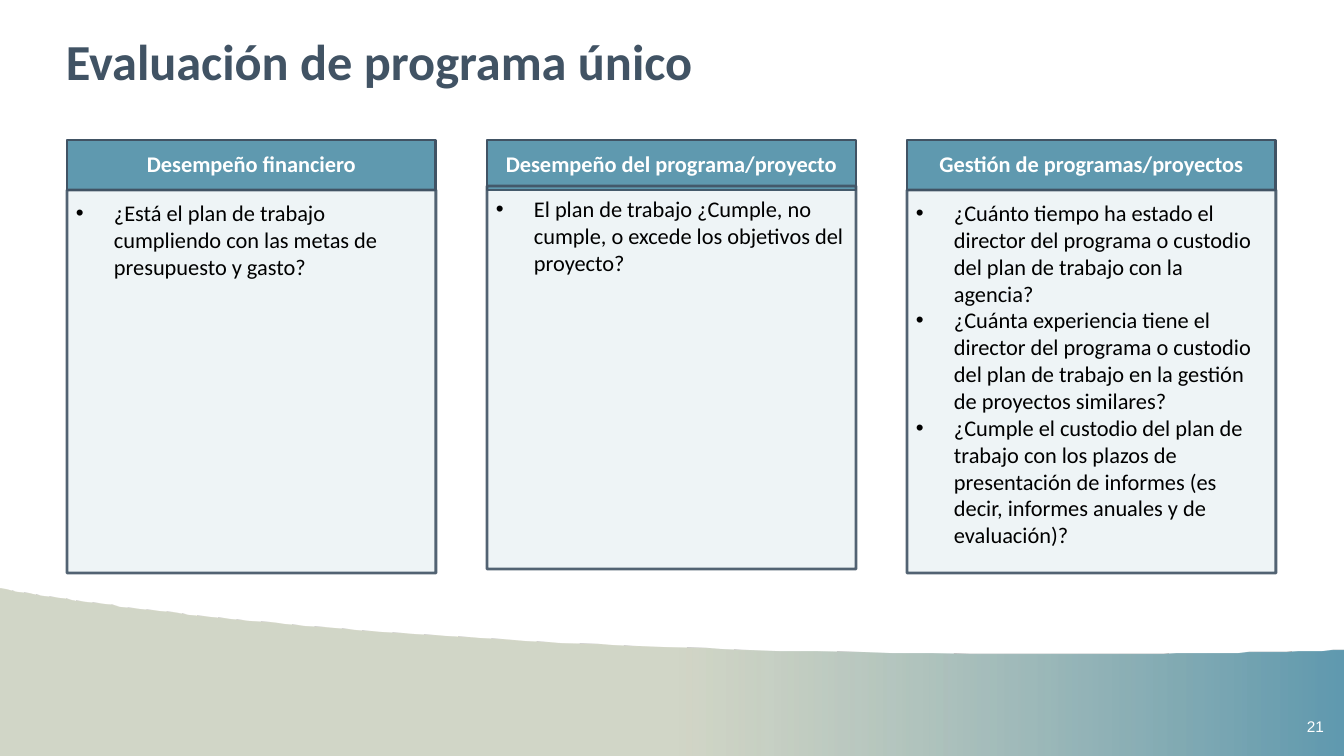
import pptx
import pptx.dml.color
import pptx.enum.shapes
import pptx.enum.text
import pptx.oxml
import pptx.oxml.ns
import pptx.util

EMU_PER_PX = 914400 / 100.8
ANCHOR = pptx.enum.text.MSO_ANCHOR
ALIGN = pptx.enum.text.PP_ALIGN

TEAL, SLATE, SAGE = "5F99AF", "415364", "B7BDA4"
WHITE, BLACK = "FFFFFF", "000000"

COLUMN_LEFT, COLUMN_STEP, COLUMN_WIDTH = 67, 420, 369
HEADER_TOP, HEADER_HEIGHT, BODY_HEIGHT = 140, 50, 383

# heading, top of the body, questions
COLUMNS = [
    ("Desempeño financiero", 190, [
        "¿Está el plan de trabajo cumpliendo con las metas de presupuesto y gasto?",
    ]),
    ("Desempeño del programa/proyecto", 186, [
        "El plan de trabajo ¿Cumple, no cumple, o excede los objetivos del proyecto?",
    ]),
    ("Gestión de programas/proyectos", 190, [
        "¿Cuánto tiempo ha estado el director del programa o custodio del plan de "
        "trabajo con la agencia?",
        "¿Cuánta experiencia tiene el director del programa o custodio del plan de "
        "trabajo en la gestión de proyectos similares?",
        "¿Cumple el custodio del plan de trabajo con los plazos de presentación de "
        "informes (es decir, informes anuales y de evaluación)?",
    ]),
]


def px(length):
    return pptx.util.Emu(round(length * EMU_PER_PX))


def rgb(hex_color):
    return pptx.dml.color.RGBColor.from_string(hex_color)


def set_opacity(color_parent, percent):
    """Make the first colour found below an XML element translucent."""
    color = next(color_parent.iter(pptx.oxml.ns.qn("a:srgbClr")))
    color.append(pptx.oxml.parse_xml(
        f'<a:alpha {pptx.oxml.ns.nsdecls("a")} val="{percent * 1000}"/>'))


def set_font(paragraph, size, color, name="Calibri", bold=False):
    paragraph.font.name = name
    paragraph.font.size = pptx.util.Pt(size)
    paragraph.font.bold = bold
    paragraph.font.color.rgb = rgb(color)


def set_margins(frame, left, top, right, bottom):
    frame.margin_left, frame.margin_top = px(left), px(top)
    frame.margin_right, frame.margin_bottom = px(right), px(bottom)


def bezier(start, control1, control2, end, steps=24):
    """Points along a cubic curve, without its start."""
    points = []
    for step in range(1, steps + 1):
        t = step / steps
        weights = ((1 - t) ** 3, 3 * t * (1 - t) ** 2, 3 * t ** 2 * (1 - t), t ** 3)
        corners = (start, control1, control2, end)
        points.append(tuple(sum(w * corner[axis] for w, corner in zip(weights, corners))
                            for axis in (0, 1)))
    return points


def add_wave(slide):
    crest, bend, left_end, right_end = (1049, 654), (218, 618), (0, 589), (1344, 650)
    outline = (bezier(crest, (731, 654), (439, 640), bend)
               + bezier(bend, (134, 609), (61, 600), left_end)
               + [(0, 757), (1344, 757), right_end]
               + bezier(right_end, (1250, 653), (1151, 654), crest))
    builder = slide.shapes.build_freeform(*crest, scale=EMU_PER_PX)
    builder.add_line_segments(outline, close=True)
    wave = builder.convert_to_shape()
    wave.shadow.inherit = False
    wave.line.fill.background()
    wave.fill.gradient()
    wave.fill.gradient_angle = 0
    for stop, position, color in zip(wave.fill.gradient_stops, (0.5, 1), (SAGE, TEAL)):
        stop.position = position
        stop.color.rgb = rgb(color)
    set_opacity(wave.element.spPr, 61)


def add_label(slide, text, left, top, width, height, wrap, **font):
    label = slide.shapes.add_textbox(px(left), px(top), px(width), px(height))
    label.text_frame.word_wrap = wrap
    label.text_frame.text = text
    set_font(label.text_frame.paragraphs[0], **font)


def add_panel(slide, left, top, height):
    panel = slide.shapes.add_shape(pptx.enum.shapes.MSO_SHAPE.RECTANGLE,
                                   px(left), px(top), px(COLUMN_WIDTH), px(height))
    panel.shadow.inherit = False
    panel.fill.solid()
    panel.fill.fore_color.rgb = rgb(TEAL)
    panel.line.color.rgb = rgb(SLATE)
    panel.line.width = pptx.util.Pt(2)
    panel.text_frame.word_wrap = True
    return panel


def add_header(slide, left, heading):
    frame = add_panel(slide, left, HEADER_TOP, HEADER_HEIGHT).text_frame
    set_margins(frame, 12, 7, 12, 7)
    frame.vertical_anchor = ANCHOR.MIDDLE
    frame.text = heading
    paragraph = frame.paragraphs[0]
    paragraph.alignment = ALIGN.CENTER
    paragraph.line_spacing = 0.9
    set_font(paragraph, 16, WHITE, bold=True)


def add_bullet(paragraph):
    properties = paragraph._p.get_or_add_pPr()
    properties.set("marL", str(px(38)))
    properties.set("indent", str(px(-38)))
    for bullet in ('buFont typeface="Arial"', 'buChar char="•"'):
        properties.append(pptx.oxml.parse_xml(
            f'<a:{bullet} {pptx.oxml.ns.nsdecls("a")}/>'))


def add_questions(slide, left, top, questions):
    body = add_panel(slide, left, top, BODY_HEIGHT)
    set_opacity(body.element.spPr, 10)
    set_opacity(body.line.fill._xPr, 90)
    frame = body.text_frame
    set_margins(frame, 9, 9, 12, 14)
    frame.vertical_anchor = ANCHOR.TOP
    frame.text = "\n".join(questions)
    for paragraph in frame.paragraphs:
        paragraph.alignment = ALIGN.LEFT
        add_bullet(paragraph)
        set_font(paragraph, 16, BLACK)


def main():
    presentation = pptx.Presentation()
    presentation.slide_width, presentation.slide_height = px(1344), px(756)
    slide = presentation.slides.add_slide(presentation.slide_layouts[6])

    add_wave(slide)
    add_label(slide, "21", 1297, 712, 39, 29, wrap=False,
              size=11, color=WHITE, name="Arial")
    add_label(slide, "Evaluación de programa único", 56, 25, 1210, 84, wrap=True,
              size=36, color=SLATE, bold=True)
    for index, (heading, body_top, questions) in enumerate(COLUMNS):
        left = COLUMN_LEFT + index * COLUMN_STEP
        add_header(slide, left, heading)
        add_questions(slide, left, body_top, questions)

    presentation.save("out.pptx")


if __name__ == "__main__":
    main()
